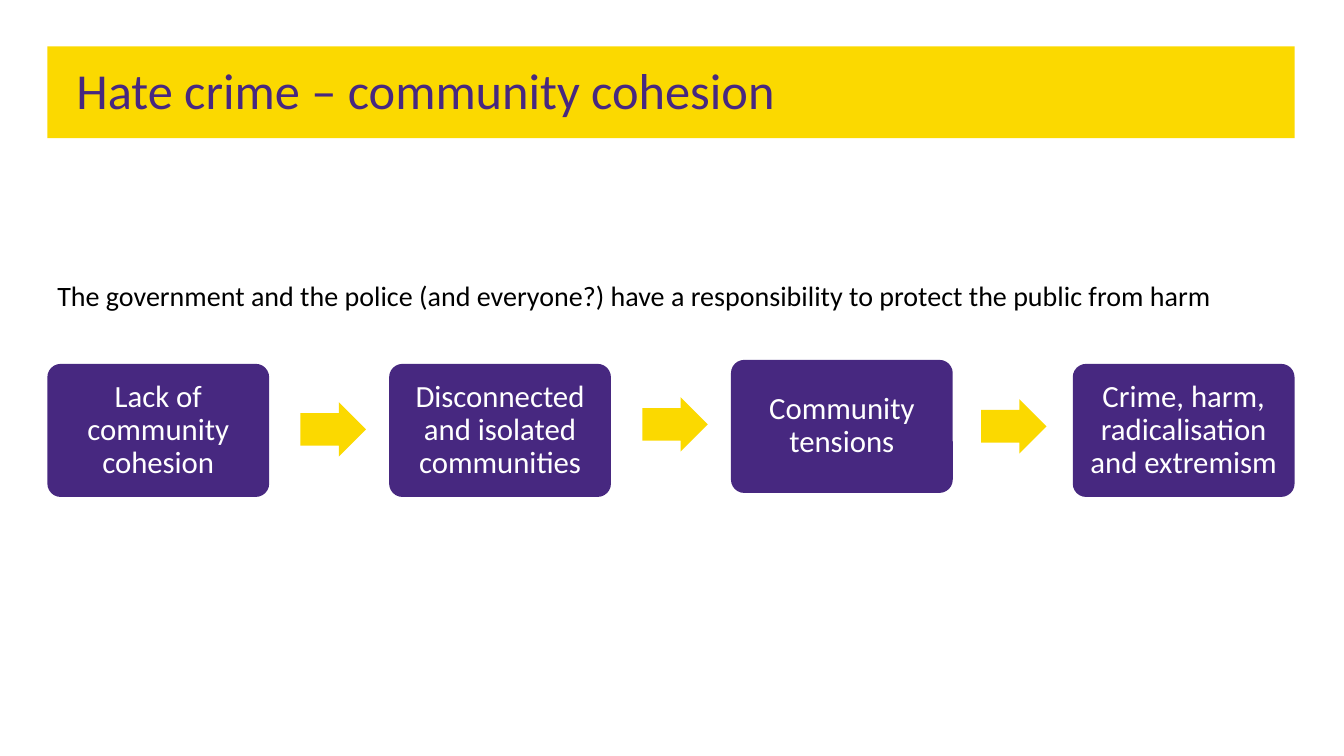
from pptx import Presentation
from pptx import util as u
from pptx.dml.color import RGBColor
from pptx.enum import shapes, text

THEME = {
    "font": "Calibri",
    "purple": RGBColor(0x47, 0x28, 0x80),
    "yellow": RGBColor(0xFB, 0xD9, 0x00),
    "black": RGBColor(0, 0, 0),
    "white": RGBColor(255, 255, 255),
    "title": 36, "statement": 20, "stage": 22,
}

# Grid: four columns between equal margins
MARGIN, CONTENT_W = 0.47, 12.37
STAGE_W, STAGE_H = 2.2, 1.32
ARROW_W, ARROW_H = 0.65, 0.54
STAGE_ROW = 3.61

# Stage wording, stage rise, and left and top of the arrow that follows
STAGES = [
    ("Lack of community cohesion", 0, (2.98, 3.99)),
    ("Disconnected and isolated communities", 0, (6.37, 3.94)),
    ("Community tensions", 0.04, (9.73, 3.96)),
    ("Crime, harm, radicalisation and extremism", 0, None),
]
COLUMN_STEP = (CONTENT_W - STAGE_W) / (len(STAGES) - 1)


def add_block(kind, left, top, width, height, fill):
    block = slide.shapes.add_shape(
        kind, u.Inches(left), u.Inches(top), u.Inches(width), u.Inches(height))
    block.shadow.inherit = False
    block.fill.solid()
    block.fill.fore_color.rgb = THEME[fill]
    block.line.fill.background()
    return block


def write(holder, wording, size, color, align, spacing=1.0):
    frame = holder.text_frame
    frame.text = wording
    frame.word_wrap = True
    frame.vertical_anchor = text.MSO_ANCHOR.MIDDLE
    paragraph = frame.paragraphs[0]
    paragraph.alignment = align
    paragraph.line_spacing = spacing
    font = paragraph.runs[0].font
    font.name, font.size = THEME["font"], u.Pt(THEME[size])
    font.color.rgb = THEME[color]
    return frame


prs = Presentation()
prs.slide_width, prs.slide_height = u.Inches(13.33), u.Inches(7.5)
slide = prs.slides.add_slide(prs.slide_layouts[6])

# Statement above the chain
statement = slide.shapes.add_textbox(
    u.Inches(MARGIN), u.Inches(2.71), u.Inches(CONTENT_W), u.Inches(0.44))
write(statement, "The government and the police (and everyone?) have a "
      "responsibility to protect the public from harm",
      "statement", "black", text.PP_ALIGN.LEFT)

# Title on its yellow band
add_block(shapes.MSO_SHAPE.RECTANGLE, MARGIN, 0.46, CONTENT_W, 0.91, "yellow")
title = slide.shapes.add_textbox(
    u.Inches(0.66), u.Inches(0.38), u.Inches(12.03), u.Inches(1.08))
write(title, "Hate crime – community cohesion",
      "title", "purple", text.PP_ALIGN.LEFT, 0.9)

# Chain of stages, each followed by an arrow
for column, (wording, rise, arrow_at) in enumerate(STAGES):
    stage = add_block(shapes.MSO_SHAPE.ROUNDED_RECTANGLE,
                      MARGIN + column * COLUMN_STEP, STAGE_ROW - rise,
                      STAGE_W, STAGE_H, "purple")
    stage.adjustments[0] = 0.1
    frame = write(stage, wording, "stage", "white", text.PP_ALIGN.CENTER, 0.9)
    frame.margin_left = frame.margin_right = u.Inches(0.12)
    frame.margin_top = frame.margin_bottom = u.Inches(0.12)
    if arrow_at:
        arrow = add_block(shapes.MSO_SHAPE.RIGHT_ARROW, *arrow_at,
                          ARROW_W, ARROW_H, "yellow")
        arrow.adjustments[0] = 0.6

prs.save("out.pptx")
